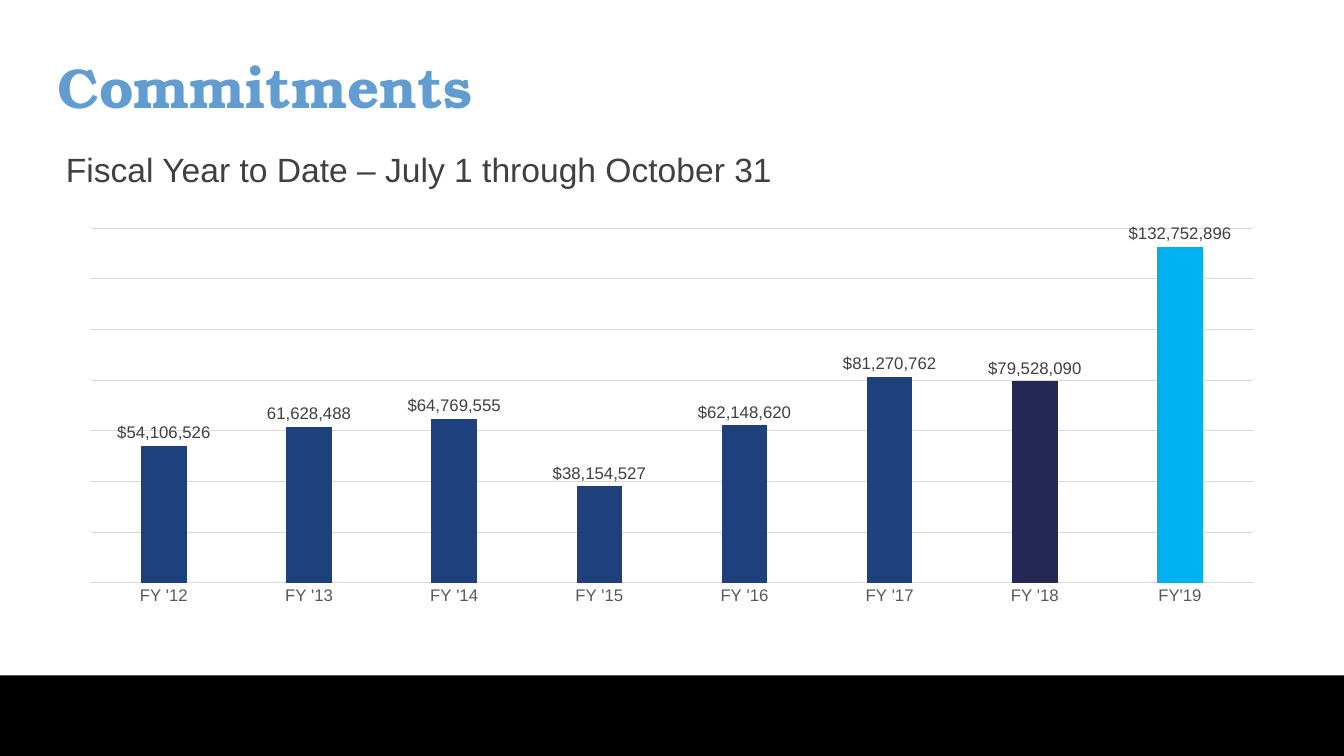
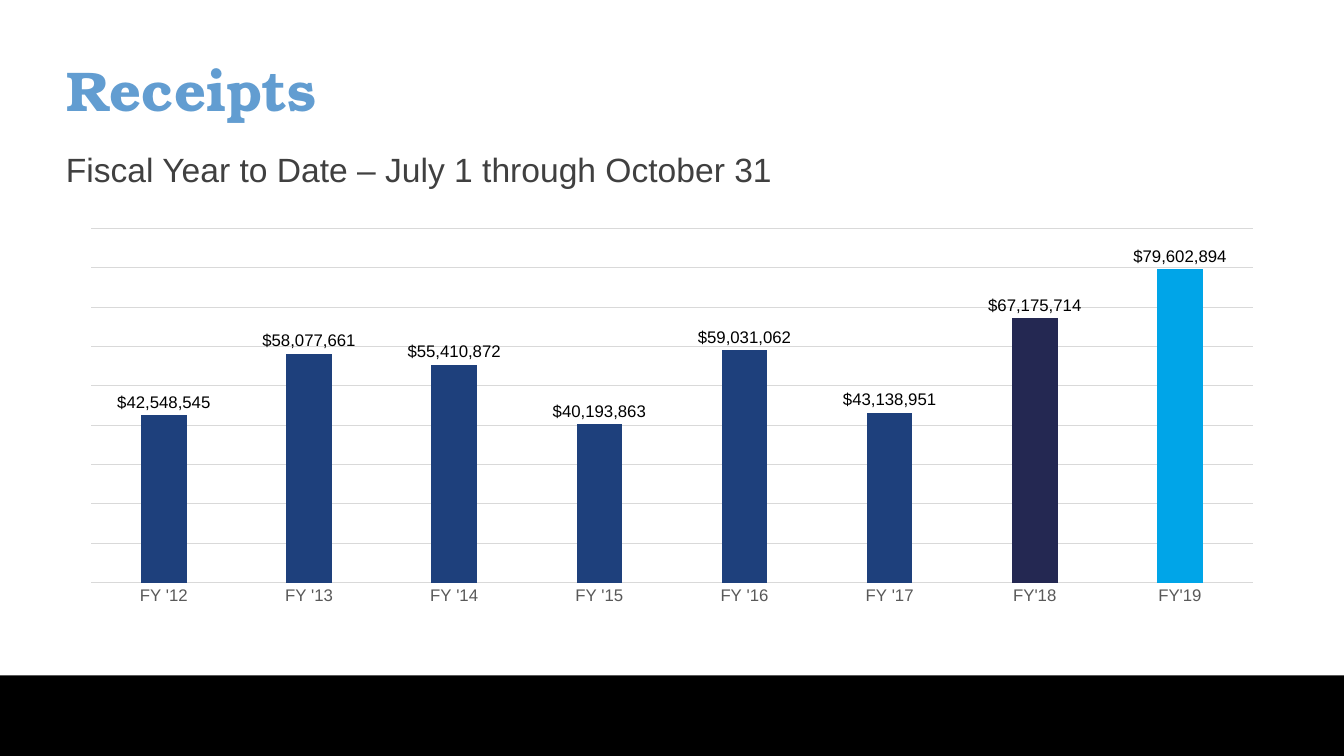
from pptx import Presentation
from pptx.chart.data import CategoryChartData
from pptx.dml.color import RGBColor
from pptx.enum.chart import XL_CHART_TYPE, XL_LABEL_POSITION, XL_TICK_MARK
from pptx.enum.shapes import MSO_SHAPE
from pptx.enum.text import MSO_ANCHOR, MSO_AUTO_SIZE, PP_ALIGN
from pptx.util import Pt

BLACK = RGBColor(0x00, 0x00, 0x00)
TITLE_BLUE = RGBColor(0x62, 0x9D, 0xD1)
DARK_GRAY = RGBColor(0x40, 0x40, 0x40)
AXIS_GRAY = RGBColor(0x59, 0x59, 0x59)
GRID_GRAY = RGBColor(0xD9, 0xD9, 0xD9)
BAR_BLUE = RGBColor(0x1E, 0x40, 0x7C)
BAR_NAVY = RGBColor(0x24, 0x28, 0x52)
BAR_CYAN = RGBColor(0x00, 0xB0, 0xF0)
BAR_SKY = RGBColor(0x00, 0xA5, 0xE8)

COLUMN_CLUSTERED = XL_CHART_TYPE.COLUMN_CLUSTERED
OUTSIDE_END = XL_LABEL_POSITION.OUTSIDE_END
NO_TICK = XL_TICK_MARK.NONE
RECTANGLE = MSO_SHAPE.RECTANGLE
MIDDLE = MSO_ANCHOR.MIDDLE
NO_AUTOFIT = MSO_AUTO_SIZE.NONE
LEFT = PP_ALIGN.LEFT

SLIDE_WIDTH = 960
SLIDE_HEIGHT = 540
BAND_TOP = 482.4
TITLE_ONLY = 5
SUBTITLE = "Fiscal Year to Date – July 1 through October 31"
EARLY_YEARS = [f"FY '{year}" for year in range(12, 18)]


class Deck:
    title_font = "TeX Gyre Bonum"
    body_font = "Arial"

    def __init__(self):
        self.presentation = Presentation()
        self.presentation.slide_width = Pt(SLIDE_WIDTH)
        self.presentation.slide_height = Pt(SLIDE_HEIGHT)
        self.slide = None

    def new_slide(self):
        layout = self.presentation.slide_layouts[TITLE_ONLY]
        self.slide = self.presentation.slides.add_slide(layout)
        self.band()

    def style_font(self, font, size, color, name=body_font, bold=False):
        font.name = name
        font.size = Pt(size)
        font.bold = bold
        font.color.rgb = color

    def band(self):
        band = self.slide.shapes.add_shape(
            RECTANGLE, 0, Pt(BAND_TOP), Pt(SLIDE_WIDTH), Pt(SLIDE_HEIGHT - BAND_TOP)
        )
        band.shadow.inherit = False
        band.fill.solid()
        band.fill.fore_color.rgb = BLACK
        band.line.fill.background()

    def title(self, text, left, top):
        title = self.slide.shapes.title
        title.left, title.top = Pt(left), Pt(top)
        title.width, title.height = Pt(864), Pt(90)
        frame = title.text_frame
        frame.text = text
        frame.auto_size = NO_AUTOFIT
        frame.vertical_anchor = MIDDLE
        paragraph = frame.paragraphs[0]
        paragraph.alignment = LEFT
        self.style_font(paragraph.runs[0].font, 40, TITLE_BLUE, self.title_font, True)

    def subtitle(self, text):
        box = self.slide.shapes.add_textbox(Pt(40), Pt(102.5), Pt(560), Pt(36))
        frame = box.text_frame
        frame.word_wrap = True
        frame.text = text
        self.style_font(frame.paragraphs[0].runs[0].font, 24, DARK_GRAY)

    def column_chart(self, categories, values, maximum, step, label_color,
                     point_colors, custom_labels):
        data = CategoryChartData(number_format="#,##0")
        data.categories = categories
        data.add_series("Series 1", values)
        chart = self.slide.shapes.add_chart(
            COLUMN_CLUSTERED, Pt(48), Pt(157.5), Pt(864), Pt(280), data
        ).chart
        chart.has_title = False
        chart.has_legend = False
        self.style_font(chart.font, 10, BLACK)
        self.axes(chart, maximum, step)

        plot = chart.plots[0]
        plot.gap_width = 219
        plot.overlap = -27
        plot.vary_by_categories = False
        series = plot.series[0]
        series.invert_if_negative = False
        self.fill(series, BAR_BLUE)
        for index, color in point_colors.items():
            self.fill(series.points[index], color)

        labels = series.data_labels
        labels.show_value = True
        labels.position = OUTSIDE_END
        labels.number_format = '"$"#,##0'
        labels.number_format_is_linked = False
        self.style_font(labels.font, 12, label_color)
        for index, text in custom_labels.items():
            label = series.points[index].data_label
            label.text_frame.text = text
            label.position = OUTSIDE_END
            run = label.text_frame.paragraphs[0].runs[0]
            self.style_font(run.font, 12, label_color)

    def axes(self, chart, maximum, step):
        value_axis = chart.value_axis
        value_axis.visible = False
        value_axis.minimum_scale = 0
        value_axis.maximum_scale = maximum
        value_axis.major_unit = step
        value_axis.has_major_gridlines = True
        category_axis = chart.category_axis
        category_axis.major_tick_mark = NO_TICK
        category_axis.minor_tick_mark = NO_TICK
        self.style_font(category_axis.tick_labels.font, 12, AXIS_GRAY)
        for line in (value_axis.major_gridlines.format.line, category_axis.format.line):
            line.color.rgb = GRID_GRAY
            line.width = Pt(0.75)

    def fill(self, element, color):
        element.format.fill.solid()
        element.format.fill.fore_color.rgb = color


def main():
    deck = Deck()

    deck.new_slide()
    deck.title("Commitments", 34, 16.5)
    deck.column_chart(
        EARLY_YEARS + ["FY '18", "FY'19"],
        [54106526, 61628488, 64769555, 38154527,
         62148620, 81270762, 79528090, 132752896],
        140_000_000, 20_000_000, DARK_GRAY,
        {6: BAR_NAVY, 7: BAR_CYAN},
        {1: "61,628,488"},
    )
    deck.subtitle(SUBTITLE)

    deck.new_slide()
    deck.title("Receipts", 40, 18.5)
    deck.column_chart(
        EARLY_YEARS + ["FY'18", "FY'19"],
        [42548545, 58077661, 55410872, 40193863,
         59031062, 43138951, 67175714, 79602894],
        90_000_000, 10_000_000, BLACK,
        {6: BAR_NAVY, 7: BAR_SKY},
        {},
    )
    deck.subtitle(SUBTITLE)

    deck.presentation.save("out.pptx")


if __name__ == "__main__":
    main()
